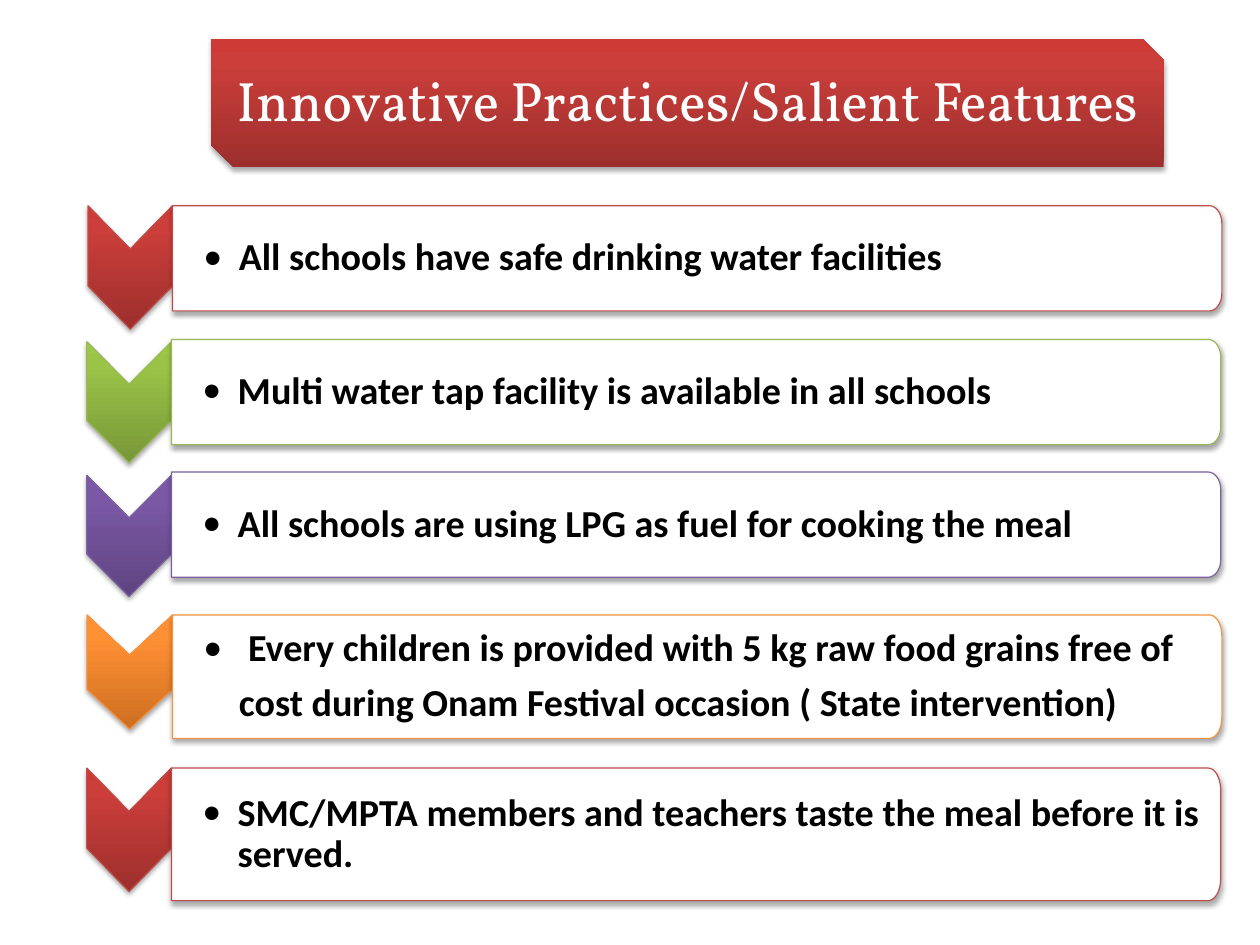
from copy import deepcopy
from math import cos, pi, sin

from lxml.etree import SubElement
from pptx import Presentation
from pptx.dml.color import RGBColor
from pptx.enum.shapes import MSO_SHAPE
from pptx.enum.text import MSO_ANCHOR, PP_ALIGN
from pptx.oxml.ns import qn
from pptx.util import Cm, Pt

PX = 9144  # one px is a hundredth of an inch

WHITE = RGBColor(0xFF, 0xFF, 0xFF)
BLACK = RGBColor(0x00, 0x00, 0x00)

# Each theme: dark, middle and light shade of the fade, then the edge.
RED = [RGBColor(0x9C, 0x2F, 0x2D), RGBColor(0xCB, 0x3E, 0x3A),
       RGBColor(0xCE, 0x3B, 0x37), RGBColor(0xBF, 0x4C, 0x48)]
GREEN = [RGBColor(0x77, 0x97, 0x37), RGBColor(0x9B, 0xC3, 0x48),
         RGBColor(0x9D, 0xC7, 0x46), RGBColor(0x98, 0xB9, 0x55)]
PURPLE = [RGBColor(0x5F, 0x44, 0x80), RGBColor(0x7B, 0x58, 0xA6),
          RGBColor(0x7C, 0x57, 0xA8), RGBColor(0x7D, 0x60, 0xA0)]
ORANGE = [RGBColor(0xCC, 0x6E, 0x20), RGBColor(0xFF, 0x90, 0x34),
          RGBColor(0xFF, 0x91, 0x36), RGBColor(0xF6, 0x92, 0x40)]

# Theme, arrow box, panel box, text lines
ROWS = [
    (RED, (77, 180, 74, 108), (151, 180, 918, 92),
     ["All schools have safe drinking water facilities"]),
    (GREEN, (76, 299, 74, 106), (150, 297, 918, 92),
     ["Multi water tap facility is available in all schools"]),
    (PURPLE, (76, 416, 74, 106), (150, 413, 918, 92),
     ["All schools are using LPG as fuel for cooking the meal"]),
    (ORANGE, (76, 538, 75, 100), (151, 538, 918, 108),
     ["Every children is provided with 5 kg raw food grains free of",
      "cost during Onam Festival occasion ( State intervention)"]),
    (RED, (76, 672, 74, 108), (150, 672, 918, 116),
     ["SMC/MPTA members and teachers taste the meal before it is served."]),
]


def add_shade(shape):
    """Give the shape a soft shadow that falls straight down."""
    shape.shadow.inherit = False
    effects = shape._element.spPr.find(qn("a:effectLst"))
    shade = SubElement(effects, qn("a:outerShdw"), blurRad="40000",
                       dist="23000", dir="5400000", rotWithShape="0")
    color = SubElement(shade, qn("a:srgbClr"), val="000000")
    SubElement(color, qn("a:alpha"), val="35000")


def set_fade(shape, theme):
    """Fade from the dark shade at the bottom to the light one on top."""
    shape.fill.gradient()
    shape.fill.gradient_angle = 90
    stops = shape._element.spPr.find(".//" + qn("a:gsLst"))
    stops.insert(1, deepcopy(stops[0]))
    for stop, place, color in zip(shape.fill.gradient_stops, (0, 0.8, 1), theme):
        stop.position = place
        stop.color.rgb = color


def set_edge(shape, color):
    shape.line.color.rgb = color
    shape.line.width = Pt(0.75)


def set_frame(shape, left, right):
    frame = shape.text_frame
    frame.word_wrap = True
    frame.vertical_anchor = MSO_ANCHOR.MIDDLE
    frame.margin_left, frame.margin_right = left * PX, right * PX
    frame.margin_top = frame.margin_bottom = 6 * PX
    return frame


def set_font(para, name, size, color, bold=False):
    for run in para.runs:
        font = run.font
        font.name, font.size, font.bold = name, Pt(size), bold
        font.color.rgb = color


def set_indent(para, left, bullet):
    props = para._p.get_or_add_pPr()
    props.set("marL", str(left * PX))
    props.set("indent", str(-left * PX if bullet else 0))
    if bullet:
        color = SubElement(props, qn("a:buClr"))
        SubElement(color, qn("a:srgbClr"), val=str(BLACK))
        SubElement(props, qn("a:buFont"), typeface="Calibri")
        SubElement(props, qn("a:buChar"), char="•")
    else:
        SubElement(props, qn("a:buNone"))


def add_outline(slide, points):
    spots = [(round(x * PX), round(y * PX)) for x, y in points]
    form = slide.shapes.build_freeform(*spots[0], scale=1.0)
    form.add_line_segments(spots[1:], close=True)
    return form.convert_to_shape()


def add_title(slide, text):
    box = [n * PX for n in (185, 34, 833, 112)]
    shape = slide.shapes.add_shape(MSO_SHAPE.SNIP_2_DIAG_RECTANGLE, *box)
    set_fade(shape, RED)
    shape.line.fill.background()
    add_shade(shape)
    para = set_frame(shape, 11, 11).paragraphs[0]
    para.text = text
    para.alignment = PP_ALIGN.CENTER
    para.line_spacing = 0.93
    set_font(para, "Vollkorn", 35, WHITE)


def add_arrow(slide, theme, box):
    x, y, w, h = box
    notch = 0.35 * h
    shape = add_outline(slide, [
        (x + w, y), (x + w, y + h - notch), (x + w / 2, y + h),
        (x, y + h - notch), (x, y), (x + w / 2, y + notch)])
    set_fade(shape, theme)
    set_edge(shape, theme[-1])
    add_shade(shape)


def add_panel(slide, theme, box, lines):
    """Draw a box with rounded right corners and a bulleted text."""
    x, y, w, h = box
    wide, tall = 11, h / 6
    turns = [(sin(n * pi / 20), cos(n * pi / 20)) for n in range(11)]
    top = [(x + w - wide + wide * s, y + tall - tall * c) for s, c in turns]
    low = [(px, 2 * y + h - py) for px, py in reversed(top)]
    shape = add_outline(slide, [(x, y)] + top + low + [(x, y + h)])

    shape.fill.solid()
    shape.fill.fore_color.rgb = WHITE
    set_edge(shape, theme[-1])
    add_shade(shape)

    frame = set_frame(shape, 27, 6)
    frame.text = "\n".join(lines)
    split = len(lines) > 1
    for n, para in enumerate(frame.paragraphs):
        first = n == 0
        set_indent(para, 39 if split and first else 31, first)
        para.alignment = PP_ALIGN.LEFT
        para.line_spacing = 0.9
        para.space_after = Pt(8.4 if split else 3.6)
        set_font(para, "Calibri", 24, BLACK, True)


def main():
    deck = Presentation()
    deck.slide_width, deck.slide_height = Cm(28), Cm(21)
    slide = deck.slides.add_slide(deck.slide_layouts[6])
    add_title(slide, "Innovative Practices/Salient Features")
    for theme, arrow, panel, lines in ROWS:
        add_arrow(slide, theme, arrow)
        add_panel(slide, theme, panel, lines)
    deck.save("out.pptx")


if __name__ == "__main__":
    main()
